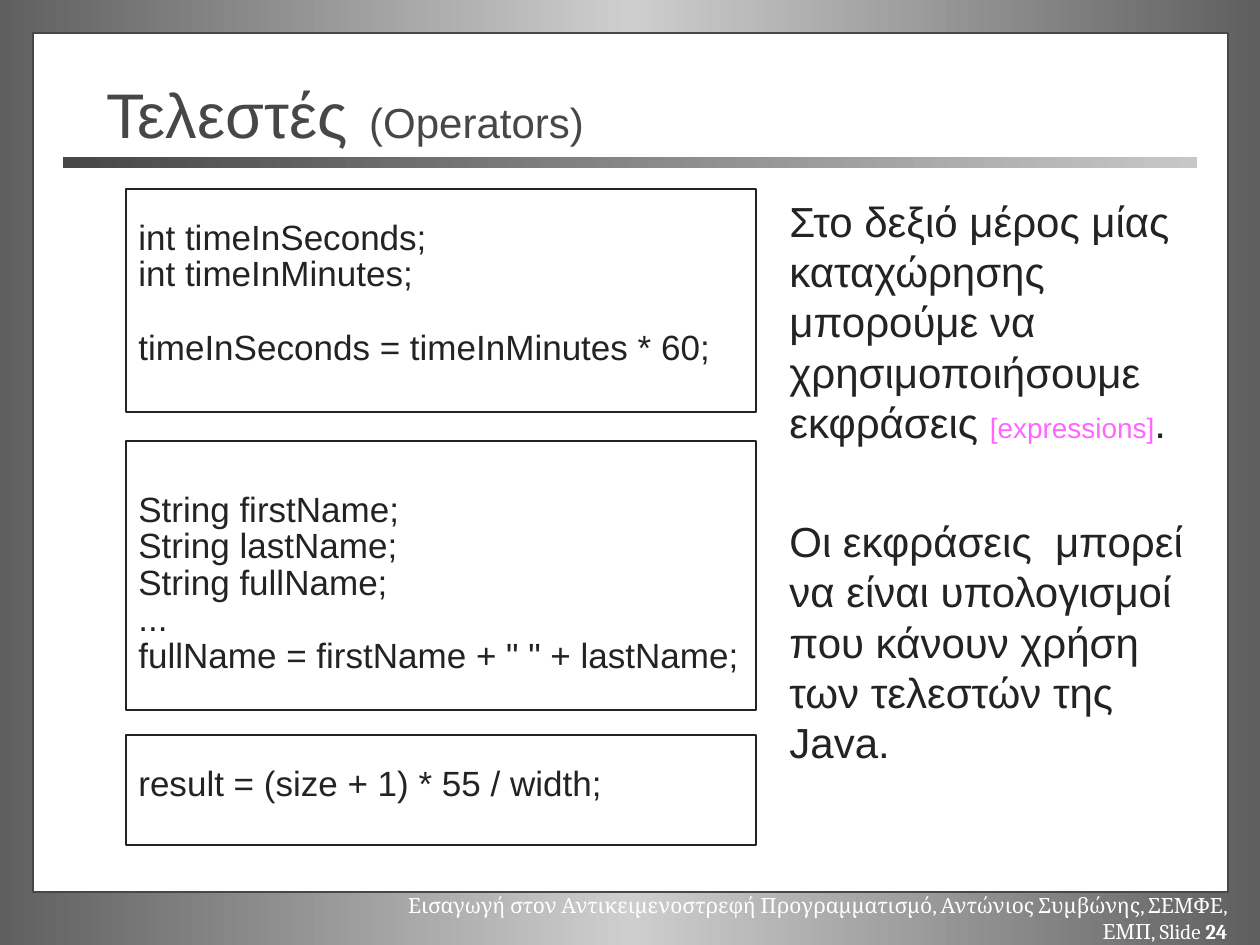
import copy
import pptx
import pptx.util
import pptx.dml.color
import pptx.enum.shapes
import pptx.enum.text

PX = 914400 / 126
COLORS = {"white": "FFFFFF", "edge": "474747", "ink": "232323", "pink": "FF66FF",
          "rim": "5F5F5F", "glow": "CECECE", "fade": "C7C7C7"}
RECTANGLE = pptx.enum.shapes.MSO_SHAPE.RECTANGLE


def rgb(name):
    return pptx.dml.color.RGBColor.from_string(COLORS[name])


def write(shape, paragraphs, size=20, color="ink", font="Arial", top=6, line=None,
          align="LEFT", anchor="TOP"):
    """Each paragraph is (space before in points, [(text, run overrides), ...])."""
    frame = shape.text_frame
    frame.word_wrap = True
    frame.vertical_anchor = getattr(pptx.enum.text.MSO_ANCHOR, anchor)
    frame.margin_top = round(top * PX)
    for index, (before, runs) in enumerate(paragraphs):
        paragraph = frame.paragraphs[0] if index == 0 else frame.add_paragraph()
        paragraph.alignment = getattr(pptx.enum.text.PP_ALIGN, align)
        paragraph.space_before = pptx.util.Pt(before)
        if line:
            paragraph.line_spacing = line
        for text, style in runs:
            run = paragraph.add_run()
            run.text = text
            run.font.name = font
            run.font.size = pptx.util.Pt(style.get("size", size))
            run.font.bold = style.get("bold", False)
            run.font.color.rgb = rgb(style.get("color", color))


presentation = pptx.Presentation()
presentation.slide_width = pptx.util.Inches(10)
presentation.slide_height = pptx.util.Inches(7.5)
slide = presentation.slides.add_slide(presentation.slide_layouts[6])
shapes = slide.shapes

# Background: dark rims, light middle
backdrop = slide.background.fill
backdrop.gradient()
backdrop.gradient_angle = 0
for stop in backdrop.gradient_stops:
    stop.color.rgb = rgb("rim")
first_stop = slide.element.xpath(".//p:bg//a:gs")[0]
first_stop.addnext(copy.deepcopy(first_stop))
middle = backdrop.gradient_stops[1]
middle.position = 0.5
middle.color.rgb = rgb("glow")

# White page
page = shapes.add_shape(RECTANGLE, *[round(v * PX) for v in (33, 33, 1195, 859)])
page.shadow.inherit = False
page.fill.solid()
page.fill.fore_color.rgb = rgb("white")
page.line.color.rgb = rgb("edge")
page.line.width = pptx.util.Pt(1)

# Footer
footer = shapes.add_textbox(*[round(v * PX) for v in (358, 887, 882, 38)])
write(footer, [(0, [("Εισαγωγή στον Αντικειμενοστρεφή Προγραμματισμό, Αντώνιος Συμβώνης, "
                     "ΣΕΜΦΕ, ΕΜΠ, Slide ", {}), ("24", {"bold": True})])],
      size=12, color="white", font="Cambria", align="RIGHT")

# Title and its rule
rule = shapes.add_shape(RECTANGLE, *[round(v * PX) for v in (63, 157, 1134, 11)])
rule.shadow.inherit = False
rule.line.fill.background()
rule.fill.gradient()
rule.fill.gradient_angle = 0
for stop, shade in zip(rule.fill.gradient_stops, ("edge", "fade")):
    stop.color.rgb = rgb(shade)
title = shapes.add_textbox(*[round(v * PX) for v in (94, 69, 1071, 78)])
write(title, [(0, [("Τελεστές", {}), (" ", {"size": 44}), ("(Operators)", {"size": 24})])],
      size=36, color="edge", anchor="MIDDLE")

# Code boxes: top, height, text inset, lines with the space before each
STEP, GAP = 4, 25
code_boxes = [
    (189, 223, 38, [(0, "int timeInSeconds;"), (STEP, "int timeInMinutes;"),
                    (GAP, "timeInSeconds = timeInMinutes * 60;")]),
    (441, 269, 58, [(0, "String firstName;"), (STEP, "String lastName;"),
                    (STEP, "String fullName;"), (STEP, "..."),
                    (STEP, 'fullName = firstName + " " + lastName;')]),
    (735, 110, 38, [(0, "result = (size + 1) * 55 / width;")]),
]
for top, height, inset, code in code_boxes:
    box = shapes.add_shape(RECTANGLE, *[round(v * PX) for v in (126, top, 630, height)])
    box.shadow.inherit = False
    box.fill.background()
    box.line.color.rgb = rgb("ink")
    box.line.width = pptx.util.Pt(1)
    write(box, [(before, [(text, {})]) for before, text in code], top=inset, line=0.7)

# Explanation
explanation = shapes.add_textbox(*[round(v * PX) for v in (777, 189, 420, 586)])
write(explanation, [
    (0, [("Στο δεξιό μέρος μίας καταχώρησης μπορούμε να χρησιμοποιήσουμε εκφράσεις ", {}),
         ("[expressions]", {"size": 16, "color": "pink"}), (".", {})]),
    (39, [("Οι εκφράσεις  μπορεί να είναι υπολογισμοί που κάνουν χρήση των τελεστών της Java.",
           {})]),
], size=24)

presentation.save("out.pptx")
